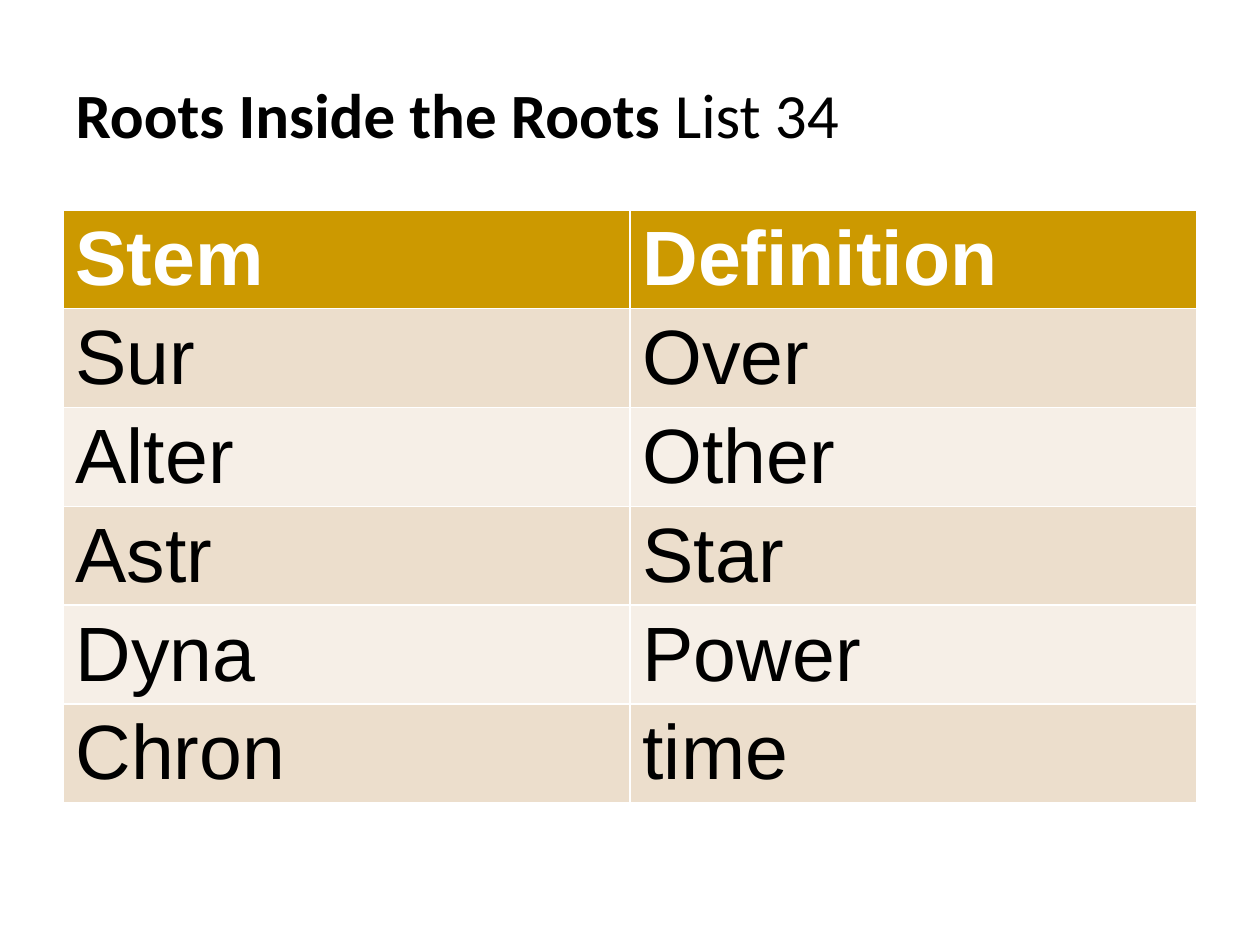
"""Build a vocabulary slide with a title and a table of stems and definitions."""
from pptx import Presentation
from pptx.dml.color import RGBColor
from pptx.enum.text import MSO_ANCHOR, PP_ALIGN
from pptx.util import Pt

BOTTOM = MSO_ANCHOR.BOTTOM
LEFT = PP_ALIGN.LEFT
TITLE_ONLY = 5
COLORS = {
    "text": "000000",
    "header_text": "FFFFFF",
    "header": "CC9900",
    "odd": "ECDECC",
    "even": "F6EFE7",
}
ROWS = [
    ("Stem", "Definition"),
    ("Sur", "Over"),
    ("Alter", "Other"),
    ("Astr", "Star"),
    ("Dyna", "Power"),
    ("Chron", "time"),
]


def format_font(font, color, **values):
    for name, value in values.items():
        setattr(font, name, value)
    font.color.rgb = RGBColor.from_string(COLORS[color])


prs = Presentation()
prs.slide_width, prs.slide_height = Pt(720), Pt(540)
s = prs.slides.add_slide(prs.slide_layouts[TITLE_ONLY])

title = s.shapes.title
title.left, title.top, title.width, title.height = Pt(36), Pt(6), Pt(534), Pt(84)
tf = title.text_frame
tf.vertical_anchor = BOTTOM
p = tf.paragraphs[0]
p.alignment = LEFT
for text, bold in [("Roots Inside the Roots ", True), ("List 34", False)]:
    r = p.add_run()
    r.text = text
    format_font(r.font, "text", name="Calibri", size=Pt(36), bold=bold)

table = s.shapes.add_table(
    len(ROWS), len(ROWS[0]), Pt(36), Pt(120), Pt(648), Pt(51.2 * len(ROWS))
).table
for i, row in enumerate(ROWS):
    fill = "header" if i == 0 else "odd" if i % 2 else "even"
    color = "header_text" if i == 0 else "text"
    for j, text in enumerate(row):
        cell = table.cell(i, j)
        cell.fill.solid()
        cell.fill.fore_color.rgb = RGBColor.from_string(COLORS[fill])
        r = cell.text_frame.paragraphs[0].add_run()
        r.text = text
        format_font(r.font, color, name="Arial", size=Pt(44), bold=i == 0)

prs.save("out.pptx")
